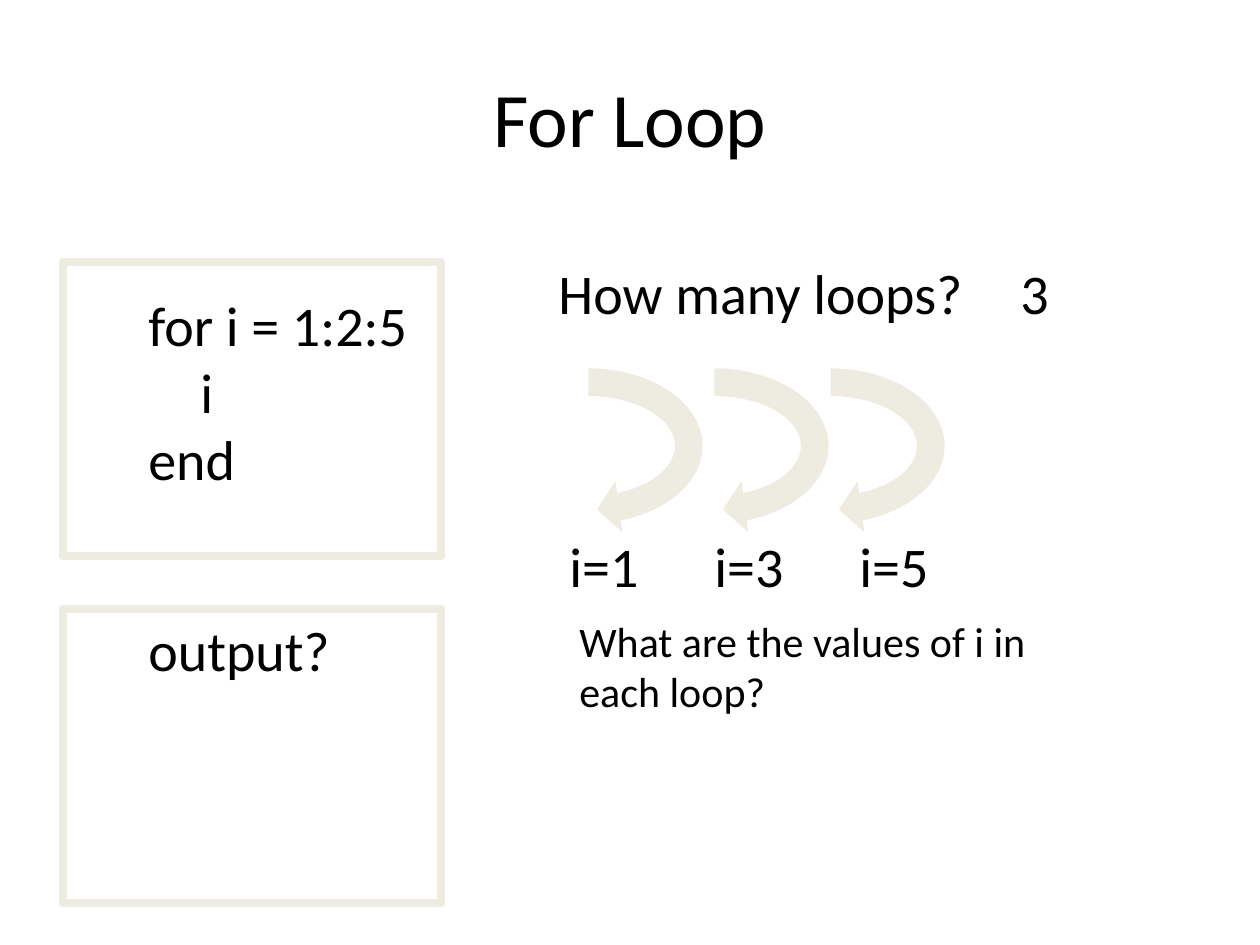
from dataclasses import dataclass

from lxml.etree import SubElement
from pptx import Presentation
from pptx.dml.color import RGBColor
from pptx.enum.shapes import MSO_SHAPE as Shape
from pptx.enum.text import MSO_ANCHOR as Anchor, PP_ALIGN as Align
from pptx.oxml.ns import qn
from pptx.util import Emu, Pt

PX_PER_INCH = 126
BLACK = RGBColor(0x00, 0x00, 0x00)
CREAM = RGBColor(0xEE, 0xEC, 0xE1)
FONT = "Calibri"
CODE_INDENT = 52
LABEL_PITCH = 145
ARROW_ADJUSTMENTS = (0.155, 11.42, 200.05, 108, 0.144)


def px(length: int) -> Emu:
    return Emu(round(length * 914400 / PX_PER_INCH))


@dataclass
class Box:
    left: int
    top: int
    width: int
    height: int

    def emu(self) -> tuple[Emu, ...]:
        return tuple(map(px, (self.left, self.top, self.width, self.height)))


@dataclass
class Text:
    box: Box
    lines: tuple[str, ...]
    size: int = 32
    align: Align = Align.LEFT
    anchor: Anchor = Anchor.TOP


TITLE = Text(Box(63, 38, 1134, 157), ("For Loop",), 44, Align.CENTER, Anchor.MIDDLE)
CODE = Text(Box(136, 284, 315, 217), ("for i = 1:2:5", "i", "end"))
LOOP_QUESTION = Text(Box(546, 252, 451, 81), ("How many loops?",))
LOOP_COUNT = Text(Box(1008, 252, 95, 81), ("3",))
LOOP_VALUES = Text(Box(557, 525, 420, 81), ("i=1\ti=3\ti=5",))
OUTPUT = Text(Box(136, 609, 451, 81), ("output?",))
VALUE_QUESTION = Text(
    Box(567, 609, 514, 115), ("What are the values of i in each loop?",), 24
)
ARROWS = [Box(left, 320, 179, 252) for left in (499, 625, 741)]
FRAMES = [Box(63, top, 378, 294) for top in (262, 609)]


def add_text(slide, text: Text) -> list:
    frame = slide.shapes.add_textbox(*text.box.emu()).text_frame
    frame.word_wrap = True
    frame.vertical_anchor = text.anchor
    frame.text = "\n".join(text.lines)
    for paragraph in frame.paragraphs:
        paragraph.alignment = text.align
        paragraph.font.name = FONT
        paragraph.font.size = Pt(text.size)
        paragraph.font.color.rgb = BLACK
    return list(frame.paragraphs)


def add_tab_stops(paragraph, pitch: int, count: int) -> None:
    properties = paragraph._p.get_or_add_pPr()
    tab_list = SubElement(properties, qn("a:tabLst"))
    for number in range(1, count + 1):
        SubElement(tab_list, qn("a:tab"), pos=str(px(pitch * number)), algn="l")
    # The schema wants tab stops ahead of the default run properties
    properties.find(qn("a:defRPr")).addprevious(tab_list)


def add_loop_arrow(slide, box: Box) -> None:
    shape = slide.shapes.add_shape(Shape.CIRCULAR_ARROW, *box.emu())
    shape.shadow.inherit = False
    shape.rotation = 90
    for index, value in enumerate(ARROW_ADJUSTMENTS):
        shape.adjustments[index] = value
    shape.fill.solid()
    shape.fill.fore_color.rgb = CREAM
    shape.line.fill.background()


def add_frame(slide, box: Box) -> None:
    shape = slide.shapes.add_shape(Shape.RECTANGLE, *box.emu())
    shape.shadow.inherit = False
    shape.fill.background()
    shape.line.color.rgb = CREAM
    shape.line.width = Pt(5)


def main() -> None:
    presentation = Presentation()
    presentation.slide_width, presentation.slide_height = px(1260), px(945)
    slide = presentation.slides.add_slide(presentation.slide_layouts[6])

    # Title and code, with the loop body indented
    add_text(slide, TITLE)
    loop_body = add_text(slide, CODE)[1]
    loop_body._p.get_or_add_pPr().set("marL", str(px(CODE_INDENT)))

    # Loop count
    add_text(slide, LOOP_QUESTION)
    add_text(slide, LOOP_COUNT)

    # One arrow and one value for each loop
    for box in ARROWS:
        add_loop_arrow(slide, box)
    values = add_text(slide, LOOP_VALUES)[0]
    add_tab_stops(values, LABEL_PITCH, 2)

    # Output, frames and closing question
    add_text(slide, OUTPUT)
    for box in FRAMES:
        add_frame(slide, box)
    add_text(slide, VALUE_QUESTION)

    presentation.save("out.pptx")


if __name__ == "__main__":
    main()
